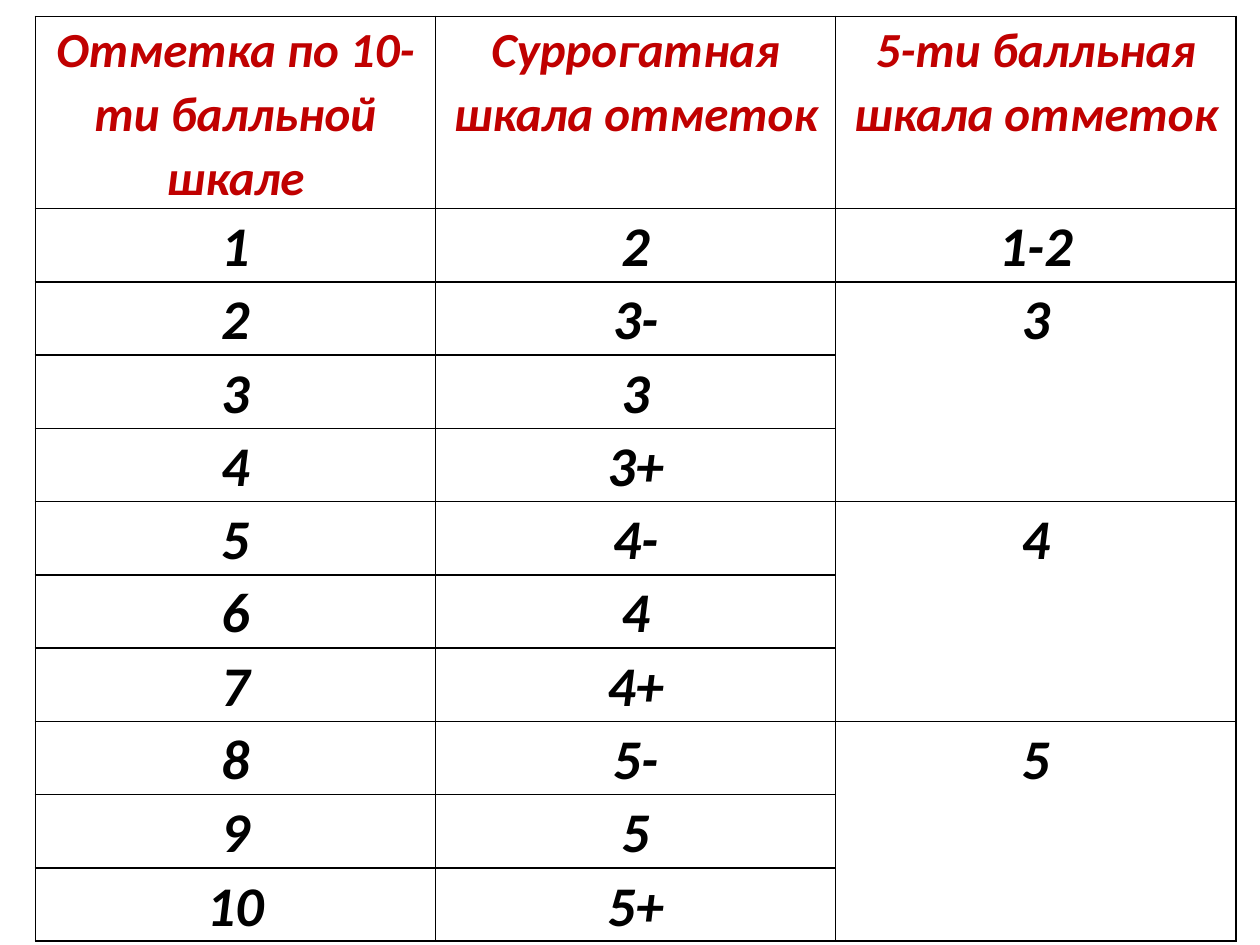
from dataclasses import dataclass

import pptx
import pptx.dml.color
import pptx.enum.text
import pptx.oxml
import pptx.oxml.ns
import pptx.table
import pptx.util

RED = pptx.dml.color.RGBColor(0xC0, 0x00, 0x00)
BLACK = pptx.dml.color.RGBColor(0x00, 0x00, 0x00)
SLIDE_WIDTH = pptx.util.Inches(10)
SLIDE_HEIGHT = pptx.util.Inches(7.5)
TABLE_LEFT, TABLE_TOP = pptx.util.Inches(0.28), pptx.util.Inches(0.13)
TABLE_WIDTH, TABLE_HEIGHT = pptx.util.Inches(9.53), pptx.util.Inches(7.2)
HEADER_HEIGHT, MARK_HEIGHT = pptx.util.Inches(1.32), pptx.util.Inches(0.52)
SIDE_MARGIN = pptx.util.Inches(0.06)
BORDER_WIDTH = pptx.util.Pt(1)


@dataclass(frozen=True)
class CellStyle:
    size: int
    color: pptx.dml.color.RGBColor


@dataclass(frozen=True)
class MarkGroup:
    """A five-point mark and the surrogate marks it covers."""
    five_point: str
    surrogate: tuple[str, ...]


HEADER_STYLE = CellStyle(28, RED)
MARK_STYLE = CellStyle(32, BLACK)
HEADERS = (
    "Отметка по 10-ти балльной шкале",
    "Суррогатная шкала отметок",
    "5-ти балльная шкала отметок",
)
GROUPS = (
    MarkGroup("1-2", ("2",)),
    MarkGroup("3", ("3-", "3", "3+")),
    MarkGroup("4", ("4-", "4", "4+")),
    MarkGroup("5", ("5-", "5", "5+")),
)


def format_cell(cell: pptx.table._Cell) -> None:
    """Set margins, black borders on all sides and no fill."""
    cell.margin_left = cell.margin_right = SIDE_MARGIN
    cell.margin_top = cell.margin_bottom = 0
    properties = cell._tc.get_or_add_tcPr()
    for side in ("lnL", "lnR", "lnT", "lnB"):
        properties.append(pptx.oxml.parse_xml(
            f'<a:{side} {pptx.oxml.ns.nsdecls("a")} w="{BORDER_WIDTH}">'
            f'<a:solidFill><a:srgbClr val="{BLACK}"/></a:solidFill></a:{side}>'
        ))
    cell.fill.background()


def write_cell(cell: pptx.table._Cell, text: str, style: CellStyle) -> None:
    cell.text = text
    paragraph = cell.text_frame.paragraphs[0]
    paragraph.alignment = pptx.enum.text.PP_ALIGN.CENTER
    paragraph.line_spacing = 1.07
    paragraph.font.name = "Calibri"
    paragraph.font.size = pptx.util.Pt(style.size)
    paragraph.font.bold = paragraph.font.italic = True
    paragraph.font.color.rgb = style.color


def fill_marks(table: pptx.table.Table) -> None:
    row = 1
    for group in GROUPS:
        last_row = row + len(group.surrogate) - 1
        write_cell(table.cell(row, 2), group.five_point, MARK_STYLE)
        if last_row > row:
            table.cell(row, 2).merge(table.cell(last_row, 2))
        for mark in group.surrogate:
            write_cell(table.cell(row, 0), str(row), MARK_STYLE)
            write_cell(table.cell(row, 1), mark, MARK_STYLE)
            row += 1


def main() -> None:
    presentation = pptx.Presentation()
    presentation.slide_width = SLIDE_WIDTH
    presentation.slide_height = SLIDE_HEIGHT
    slide = presentation.slides.add_slide(presentation.slide_layouts[6])

    row_count = 1 + sum(len(group.surrogate) for group in GROUPS)
    frame = slide.shapes.add_table(
        row_count, len(HEADERS), TABLE_LEFT, TABLE_TOP, TABLE_WIDTH, TABLE_HEIGHT
    )
    table = frame.table
    table.first_row = table.horz_banding = False
    for index, row in enumerate(table.rows):
        row.height = MARK_HEIGHT if index else HEADER_HEIGHT
    frame.height = TABLE_HEIGHT

    for cell in table.iter_cells():
        format_cell(cell)
    for column, header in enumerate(HEADERS):
        write_cell(table.cell(0, column), header, HEADER_STYLE)
    fill_marks(table)
    presentation.save("out.pptx")


if __name__ == "__main__":
    main()
